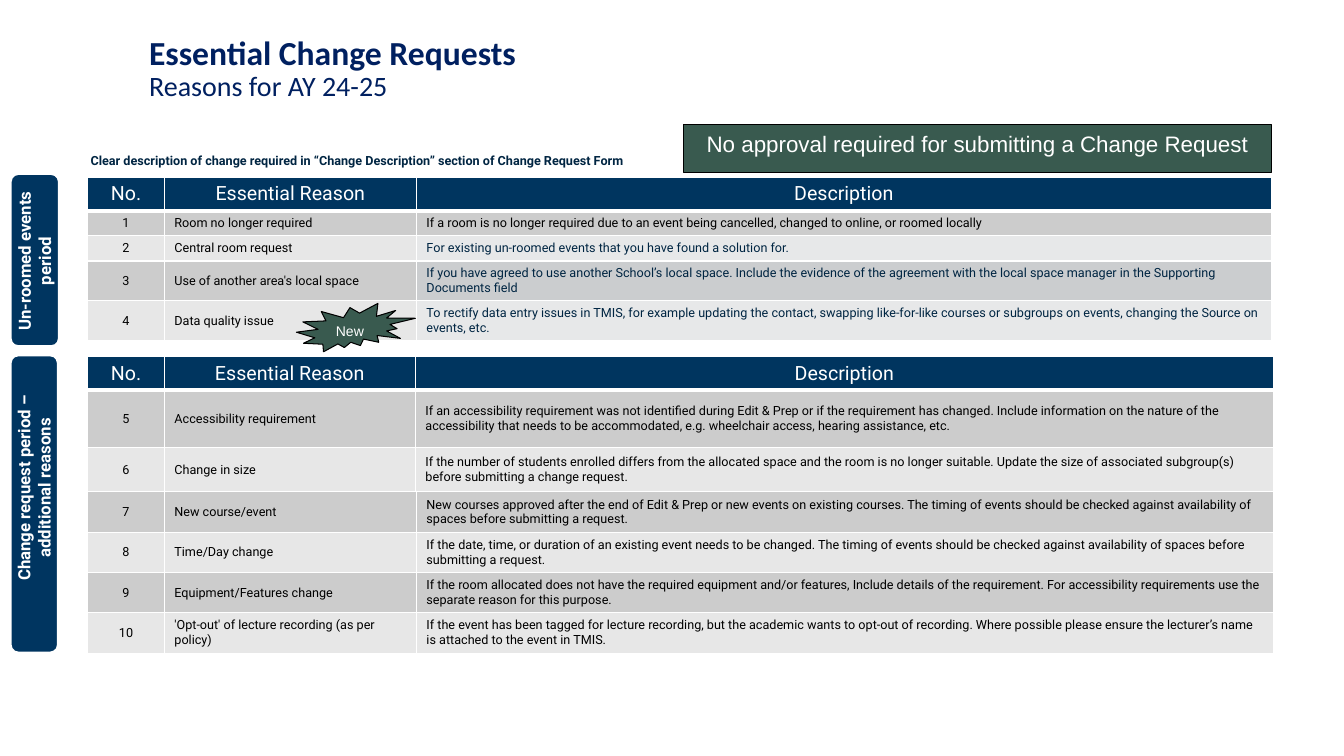
from lxml.etree import SubElement
from pptx import Presentation
from pptx.dml.color import RGBColor
from pptx.enum.shapes import MSO_SHAPE
from pptx.enum.text import MSO_ANCHOR, PP_ALIGN
from pptx.oxml.ns import qn
from pptx.util import Inches, Pt

COLORS = {
    "white": "FFFFFF", "black": "000000", "title": "002060", "ink": "002542",
    "head": "00355F", "tab": "003560", "green": "395A4F",
    "dark": "CCCCCC", "light": "E7E7E7", "dark tint": "CBCDCF", "light tint": "E7E8E9",
}
RGB = {name: RGBColor.from_string(code) for name, code in COLORS.items()}

FORMATS = {
    "title": dict(name="Calibri", size=Pt(24), bold=True, color="title"),
    "sub": dict(name="Calibri", size=Pt(20), bold=False, color="title"),
    "note": dict(name="Roboto", size=Pt(9), bold=True, color="ink"),
    "head": dict(name="Roboto", size=Pt(14), bold=False, color="white"),
    "cell": dict(name="Roboto", size=Pt(9), bold=False, color="black"),
    "cell ink": dict(name="Roboto", size=Pt(9), bold=False, color="ink"),
    "tab": dict(name="Roboto", size=Pt(12), bold=True, color="white"),
    "banner": dict(name="Arial", size=Pt(16), bold=False, color="white"),
    "new": dict(name="Arial", size=Pt(10), bold=False, color="white"),
}


def write(para, text, style, align=PP_ALIGN.LEFT):
    para.alignment = align
    run = para.add_run()
    run.text = text
    for key, value in FORMATS[style].items():
        if key == "color":
            run.font.color.rgb = RGB[value]
        else:
            setattr(run.font, key, value)


def edge(cell, low):
    """Draw white cell borders, with the bottom one `low` points wide."""
    props = cell._tc.get_or_add_tcPr()
    for side, width in (("L", 1), ("R", 1), ("T", 1), ("B", low)):
        line = SubElement(props, qn(f"a:ln{side}"), w=str(Pt(width)))
        fill = SubElement(line, qn("a:solidFill"))
        SubElement(fill, qn("a:srgbClr"), val=COLORS["white"])


HEAD = ("No.", "Essential Reason", "Description")
# left, top, column widths, row heights, rows
TABLES = [
    (0.87, 1.76, (0.76, 2.5, 8.48), (0.33, 0.25, 0.25, 0.39, 0.39), [
        HEAD,
        ("1", "Room no longer required",
         "If a room is no longer required due to an event being cancelled, changed to online, or roomed locally"),
        ("2", "Central room request",
         "For existing un-roomed events that you have found a solution for."),
        ("3", "Use of another area's local space",
         "If you have agreed to use another School’s local space. Include the evidence of the agreement "
         "with the local space manager in the Supporting Documents field"),
        ("4", "Data quality issue",
         "To rectify data entry issues in TMIS, for example updating the contact, swapping like-for-like "
         "courses or subgroups on events, changing the Source on events, etc."),
    ]),
    (0.87, 3.54, (0.76, 2.49, 8.51), (0.33, 0.57, 0.44), [
        HEAD,
        ("5", "Accessibility requirement",
         "If an accessibility requirement was not identified during Edit & Prep or if the requirement has "
         "changed. Include information on the nature of the accessibility that needs to be accommodated, "
         "e.g. wheelchair access, hearing assistance, etc."),
        ("6", "Change in size",
         "If the number of students enrolled differs from the allocated space and the room is no longer "
         "suitable. Update the size of associated subgroup(s) before submitting a change request."),
    ]),
    (0.87, 4.88, (0.76, 2.5, 8.5), (0.4,) * 4, [
        ("7", "New course/event",
         "New courses approved after the end of Edit & Prep or new events on existing courses. The timing "
         "of events should be checked against availability of spaces before submitting a request."),
        ("8", "Time/Day change",
         "If the date, time, or duration of an existing event needs to be changed. The timing of events "
         "should be checked against availability of spaces before submitting a request."),
        ("9", "Equipment/Features change",
         "If the room allocated does not have the required equipment and/or features, Include details of "
         "the requirement. For accessibility requirements use the separate reason for this purpose."),
        ("10", "'Opt-out' of lecture recording (as per policy)",
         "If the event has been tagged for lecture recording, but the academic wants to opt-out of "
         "recording. Where possible please ensure the lecturer’s name is attached to the event in TMIS."),
    ]),
]

deck = Presentation()
deck.slide_width, deck.slide_height = Inches(13.33), Inches(7.5)
shapes = deck.slides.add_slide(deck.slide_layouts[6]).shapes

# Tables
for left, top, widths, heights, rows in TABLES:
    frame = shapes.add_table(len(rows), len(widths), Inches(left), Inches(top),
                             Inches(sum(widths)), Inches(sum(heights)))
    table = frame.table
    table.first_row = rows[0] == HEAD
    table.horz_banding = False
    for col, width in zip(table.columns, widths):
        col.width = Inches(width)
    for r, (row, height) in enumerate(zip(rows, heights)):
        table.rows[r].height = Inches(height)
        is_head = row == HEAD
        for c, text in enumerate(row):
            cell = table.cell(r, c)
            inked = c == 2 and row[0] in ("2", "3", "4")
            fill = "head" if is_head else "dark" if int(row[0]) % 2 else "light"
            style = "head" if is_head else "cell ink" if inked else "cell"
            centre = is_head or c == 0
            edge(cell, 3 if is_head else 1)
            cell.fill.solid()
            cell.fill.fore_color.rgb = RGB[fill + " tint" if inked else fill]
            cell.vertical_anchor = MSO_ANCHOR.TOP if is_head else MSO_ANCHOR.MIDDLE
            write(cell.text_frame.paragraphs[0], text, style,
                  PP_ALIGN.CENTER if centre else PP_ALIGN.LEFT)

# Side tabs, banner and burst
FORMS = [
    (MSO_SHAPE.ROUNDED_RECTANGLE, (0.1, 1.72, 0.49, 1.72), "tab", "white", 2.25, None),
    (MSO_SHAPE.ROUNDED_RECTANGLE, (0.1, 3.52, 0.48, 2.96), "tab", "white", 2.25, None),
    (MSO_SHAPE.RECTANGLE, (6.78, 1.24, 5.83, 0.47), "green", "black", 0.75,
     ("No approval required for submitting a Change Request", "banner", PP_ALIGN.CENTER)),
    (MSO_SHAPE.EXPLOSION2, (2.94, 3.01, 1.18, 0.48), "green", "black", 0.75,
     ("New", "new", PP_ALIGN.LEFT)),
]
for kind, box, fill, line, width, label in FORMS:
    form = shapes.add_shape(kind, *map(Inches, box))
    form.shadow.inherit = False
    form.fill.solid()
    form.fill.fore_color.rgb = RGB[fill]
    form.line.color.rgb = RGB[line]
    form.line.width = Pt(width)
    if label:
        form.text_frame.vertical_anchor = MSO_ANCHOR.TOP
        write(form.text_frame.paragraphs[0], *label)

# Title, note and tab labels
TEXTS = [
    ((1.38, 0.31, 9.69, 0.93), 0, 0.9, PP_ALIGN.LEFT,
     [("Essential Change Requests", "title"), ("Reasons for AY 24-25", "sub")]),
    ((0.8, 1.47, 8.5, 0.25), 0, 1, PP_ALIGN.LEFT,
     [("Clear description of change required in “Change Description” section of Change Request Form", "note")]),
    ((-0.52, 2.35, 1.72, 0.48), 270, 1, PP_ALIGN.CENTER, [("Un-roomed events period", "tab")]),
    ((-0.99, 4.63, 2.65, 0.42), 270, 1, PP_ALIGN.CENTER,
     [("Change request period – additional reasons", "tab")]),
]
for box, turn, space, align, lines in TEXTS:
    label = shapes.add_textbox(*map(Inches, box))
    label.rotation = turn
    frame = label.text_frame
    frame.word_wrap = True
    frame.vertical_anchor = MSO_ANCHOR.MIDDLE if turn else MSO_ANCHOR.TOP
    for n, (text, style) in enumerate(lines):
        para = frame.add_paragraph() if n else frame.paragraphs[0]
        para.line_spacing = space
        write(para, text, style, align)

deck.save("out.pptx")
